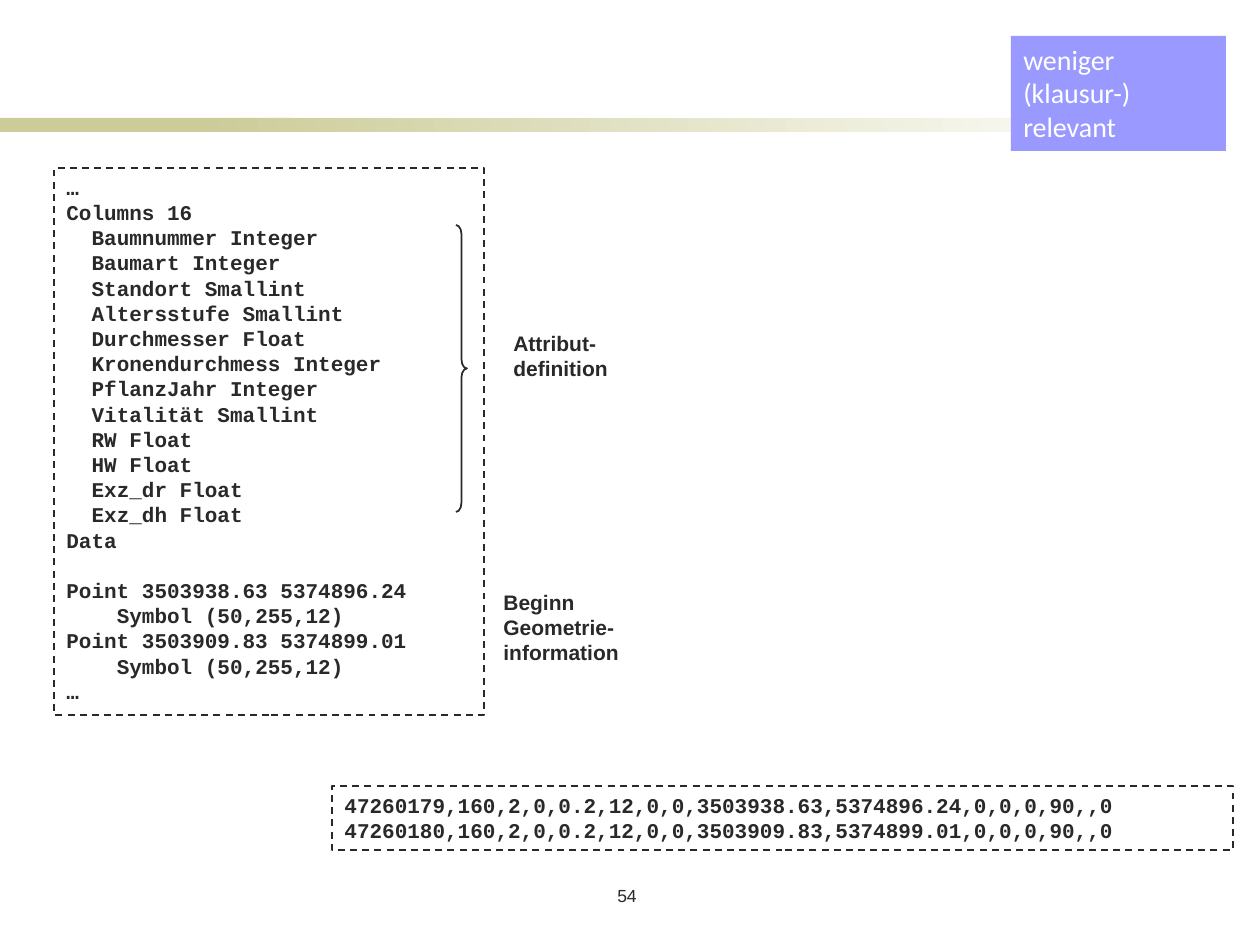
from copy import deepcopy

from pptx import Presentation
from pptx.dml.color import RGBColor
from pptx.enum.dml import MSO_LINE
from pptx.enum.shapes import MSO_SHAPE
from pptx.enum.text import MSO_ANCHOR, PP_ALIGN
from pptx.oxml.ns import qn
from pptx.util import Emu, Pt

PX_PER_INCH = 126
INK = RGBColor(0x29, 0x29, 0x29)
WHITE = RGBColor(0xFF, 0xFF, 0xFF)
OLIVE = RGBColor(0xCC, 0xCC, 0x99)
VIOLET = RGBColor(0x99, 0x99, 0xFF)

LINE_PITCH = 14.4  # points between text lines
CHAR_WIDTH = 7.2   # points per Courier character at 12 pt

# Each entry: indent in characters, blank lines before, text lines
CODE_BLOCKS = [
    (0, 0, ["…", "Columns 16"]),
    (2, 0, ["Baumnummer Integer", "Baumart Integer", "Standort Smallint",
            "Altersstufe Smallint", "Durchmesser Float",
            "Kronendurchmess Integer", "PflanzJahr Integer",
            "Vitalität Smallint", "RW Float", "HW Float",
            "Exz_dr Float", "Exz_dh Float"]),
    (0, 0, ["Data"]),
    (0, 1, ["Point 3503938.63 5374896.24"]),
    (4, 0, ["Symbol (50,255,12)"]),
    (0, 0, ["Point 3503909.83 5374899.01"]),
    (4, 0, ["Symbol (50,255,12)"]),
    (0, 0, ["…"]),
]
RECORDS = [
    "47260179,160,2,0,0.2,12,0,0,3503938.63,5374896.24,0,0,0,90,,0",
    "47260180,160,2,0,0.2,12,0,0,3503909.83,5374899.01,0,0,0,90,,0",
]


def px(n):
    return Emu(round(n * 914400 / PX_PER_INCH))


def add_box(s, box, kind=MSO_SHAPE.RECTANGLE, fill=None, line=None, dash=None):
    sp = s.shapes.add_shape(kind, *map(px, box))
    sp.shadow.inherit = False
    if fill is None:
        sp.fill.background()
    else:
        sp.fill.solid()
        sp.fill.fore_color.rgb = fill
    if line is None:
        sp.line.fill.background()
    else:
        sp.line.color.rgb = line
        sp.line.width = Pt(1)
        sp.line.dash_style = dash
    return sp


def add_label(s, box, text, **fmt):
    sp = s.shapes.add_textbox(*map(px, box))
    write(sp.text_frame, text, **fmt)


def write(tf, text, font="Arial", size=12, color=INK, bold=False,
          align=PP_ALIGN.LEFT, pitch=None, indent=0, before=0):
    """Add one paragraph, filling the first one if it is still empty."""
    tf.word_wrap = True
    tf.vertical_anchor = MSO_ANCHOR.TOP
    p = tf.add_paragraph() if tf.text else tf.paragraphs[0]
    p.text = text
    p.alignment = align
    if pitch:
        p.line_spacing = Pt(pitch)
    if before:
        p.space_before = Pt(before)
    if indent:
        p._p.get_or_add_pPr().set("marL", str(Pt(indent)))
    for r in p.runs:
        r.font.name = font
        r.font.size = Pt(size)
        r.font.bold = bold
        r.font.color.rgb = color
    # Line breaks take the text format, so they do not change line height
    for br in p._p.findall(qn("a:br")):
        br.append(deepcopy(p.runs[0]._r.rPr))


def add_header_band(s):
    add_box(s, (0, 118, 294, 14), fill=OLIVE)
    band = add_box(s, (199, 118, 998, 14))
    band.fill.gradient()
    band.fill.gradient_angle = 0
    for stop, color, position in zip(band.fill.gradient_stops,
                                     (OLIVE, WHITE), (0, 1)):
        stop.color.rgb = color
        stop.position = position


def add_code(s, box, blocks, fill=None):
    sp = add_box(s, box, fill=fill, line=INK, dash=MSO_LINE.DASH)
    for indent, blanks, lines in blocks:
        for text in lines:
            write(sp.text_frame, text, font="Courier New", bold=True,
                  pitch=LINE_PITCH, indent=indent * CHAR_WIDTH,
                  before=blanks * LINE_PITCH)


def main():
    prs = Presentation()
    prs.slide_width, prs.slide_height = px(1260), px(945)
    s = prs.slides.add_slide(prs.slide_layouts[6])

    # Header band and page number
    add_header_band(s)
    add_label(s, (427, 879, 400, 44), "54", size=10, align=PP_ALIGN.CENTER)

    # File listings; the first ends between the brace and its labels
    add_code(s, (54, 168, 430, 547), CODE_BLOCKS)
    add_code(s, (332, 786, 901, 64), [(0, 0, RECORDS)], fill=WHITE)

    # Brace and explanations
    brace = add_box(s, (456, 225, 11, 287), MSO_SHAPE.RIGHT_BRACE, line=INK)
    brace.adjustments[0] = 0.83
    brace.adjustments[1] = 0.5
    add_label(s, (501, 324, 139, 63), "Attribut-definition",
              bold=True, pitch=LINE_PITCH)
    add_label(s, (491, 583, 193, 88), "Beginn\nGeometrie-information",
              bold=True, pitch=LINE_PITCH)

    # Relevance note
    note = add_box(s, (1011, 36, 215, 115), fill=VIOLET)
    write(note.text_frame, "weniger (klausur-)\nrelevant",
          font="Calibri", size=16, color=WHITE)

    prs.save("out.pptx")


if __name__ == "__main__":
    main()
